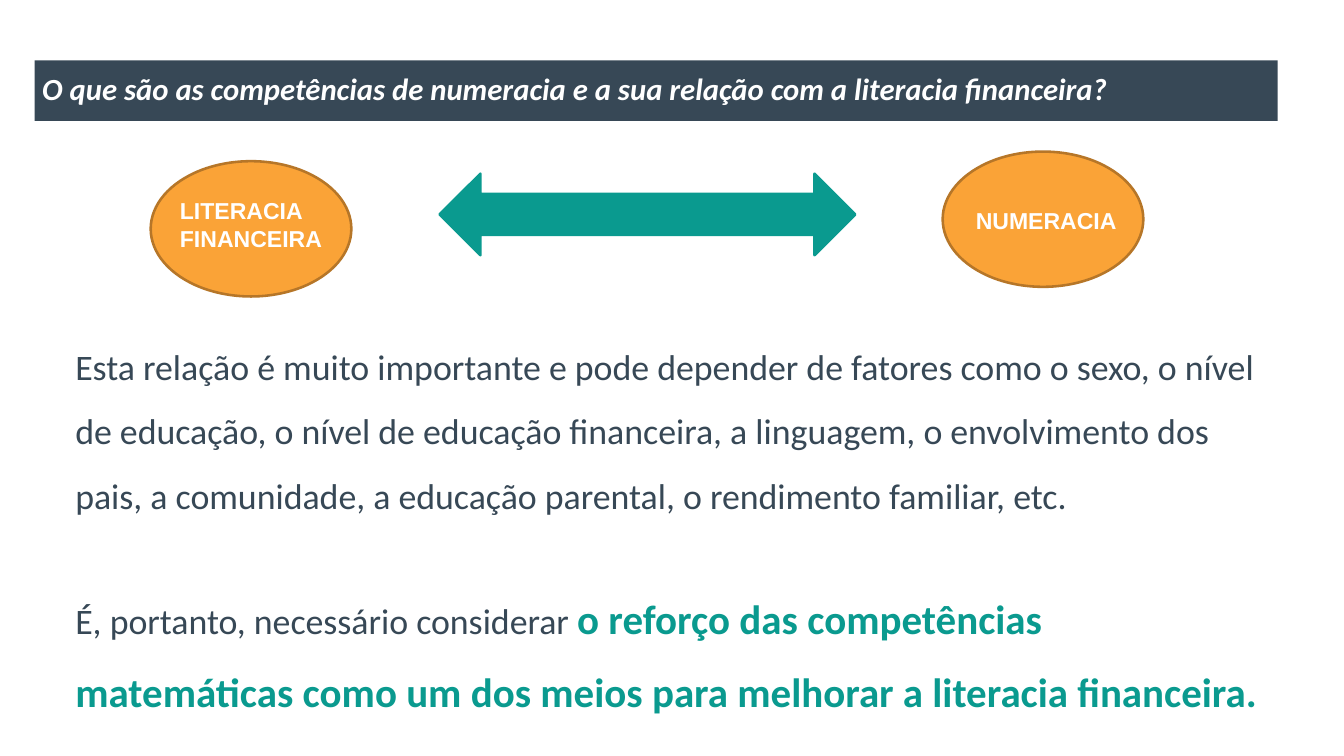
from dataclasses import dataclass

from pptx import Presentation
from pptx.dml.color import RGBColor
from pptx.enum.shapes import MSO_SHAPE
from pptx.enum.text import MSO_ANCHOR, MSO_AUTO_SIZE, PP_ALIGN
from pptx.util import Emu, Pt

RECT = MSO_SHAPE.RECTANGLE
OVAL = MSO_SHAPE.OVAL
ARROW = MSO_SHAPE.LEFT_RIGHT_ARROW
MIDDLE = MSO_ANCHOR.MIDDLE
GROW = MSO_AUTO_SIZE.SHAPE_TO_FIT_TEXT
LEFT = PP_ALIGN.LEFT

SCALE = 9525  # EMU per px, 96 px to the inch
WIDTH, HEIGHT = 1400, 788


@dataclass(frozen=True)
class Theme:
    slate: str = "374856"
    teal: str = "0A9A8F"
    orange: str = "FAA337"
    brown: str = "B67628"
    white: str = "FFFFFF"
    body: str = "Calibri"
    label: str = "Arial"
    small: int = 18
    head: int = 24
    text: int = 28
    strong: int = 32
    edge: int = 2


THEME = Theme()


@dataclass(frozen=True)
class Box:
    x: int
    y: int
    w: int
    h: int

    def emu(self) -> tuple[Emu, Emu, Emu, Emu]:
        return px(self.x), px(self.y), px(self.w), px(self.h)


@dataclass(frozen=True)
class Run:
    text: str
    size: int
    color: str
    font: str = THEME.body
    bold: bool = False
    italic: bool = False


@dataclass(frozen=True)
class Form:
    kind: MSO_SHAPE
    box: Box
    fill: str
    line: str | None = None


@dataclass(frozen=True)
class Note:
    box: Box
    paras: list[list[Run]]
    space: float | None = None


def px(value: int) -> Emu:
    return Emu(value * SCALE)


def rgb(code: str) -> RGBColor:
    return RGBColor.from_string(code)


def write(frame, paras: list[list[Run]], space: float | None) -> None:
    frame.word_wrap = True
    for i, runs in enumerate(paras):
        para = frame.add_paragraph() if i else frame.paragraphs[0]
        para.alignment = LEFT
        para.line_spacing = space
        for item in runs:
            run = para.add_run()
            run.text = item.text
            font = run.font
            font.name, font.size = item.font, Pt(item.size)
            font.bold, font.italic = item.bold, item.italic
            font.color.rgb = rgb(item.color)


def draw(slide, form: Form):
    shape = slide.shapes.add_shape(form.kind, *form.box.emu())
    shape.shadow.inherit = False
    shape.fill.solid()
    shape.fill.fore_color.rgb = rgb(form.fill)
    if form.line:
        shape.line.color.rgb = rgb(form.line)
        shape.line.width = Pt(THEME.edge)
    else:
        shape.line.fill.background()
    return shape


def note(slide, item: Note) -> None:
    frame = slide.shapes.add_textbox(*item.box.emu()).text_frame
    frame.auto_size = GROW
    write(frame, item.paras, item.space)


def tag(text: str) -> list[Run]:
    return [Run(text, THEME.small, THEME.white, THEME.label, bold=True)]


def plain(text: str) -> Run:
    return Run(text, THEME.text, THEME.slate)


BAR = Form(RECT, Box(36, 63, 1295, 63), THEME.slate)
TITLE = Run("O que são as competências de numeracia e a sua relação com a "
            "literacia financeira?", THEME.head, THEME.white,
            bold=True, italic=True)

FORMS = [
    Form(ARROW, Box(458, 181, 433, 85), THEME.teal, THEME.teal),
    *(Form(OVAL, Box(x, y, 209, 141), THEME.orange, THEME.brown)
      for x, y in ((157, 168), (982, 158))),
]

NOTES = [
    Note(Box(178, 200, 169, 68), [tag("LITERACIA"), tag("FINANCEIRA")]),
    Note(Box(1007, 210, 167, 38), [tag("NUMERACIA")]),
    Note(Box(69, 332, 1262, 206), [[plain(
        "Esta relação é muito importante e pode depender de fatores como o "
        "sexo, o nível de educação, o nível de educação financeira, a "
        "linguagem, o envolvimento dos pais, a comunidade, a educação "
        "parental, o rendimento familiar, etc.")]], 1.5),
    Note(Box(69, 588, 1262, 156), [[
        plain("É, portanto, necessário considerar "),
        Run("o reforço das competências matemáticas como um dos meios para "
            "melhorar a literacia financeira.",
            THEME.strong, THEME.teal, bold=True)]], 1.5),
]


def main() -> None:
    deck = Presentation()
    deck.slide_width, deck.slide_height = px(WIDTH), px(HEIGHT)
    slide = deck.slides.add_slide(deck.slide_layouts[6])

    # Title bar
    frame = draw(slide, BAR).text_frame
    frame.vertical_anchor = MIDDLE
    frame.margin_left = frame.margin_right = px(8)
    write(frame, [[TITLE]], 0.9)

    # Arrow and the two ovals
    for form in FORMS:
        draw(slide, form)

    # Oval labels and body text
    for item in NOTES:
        note(slide, item)

    deck.save("out.pptx")


if __name__ == "__main__":
    main()
